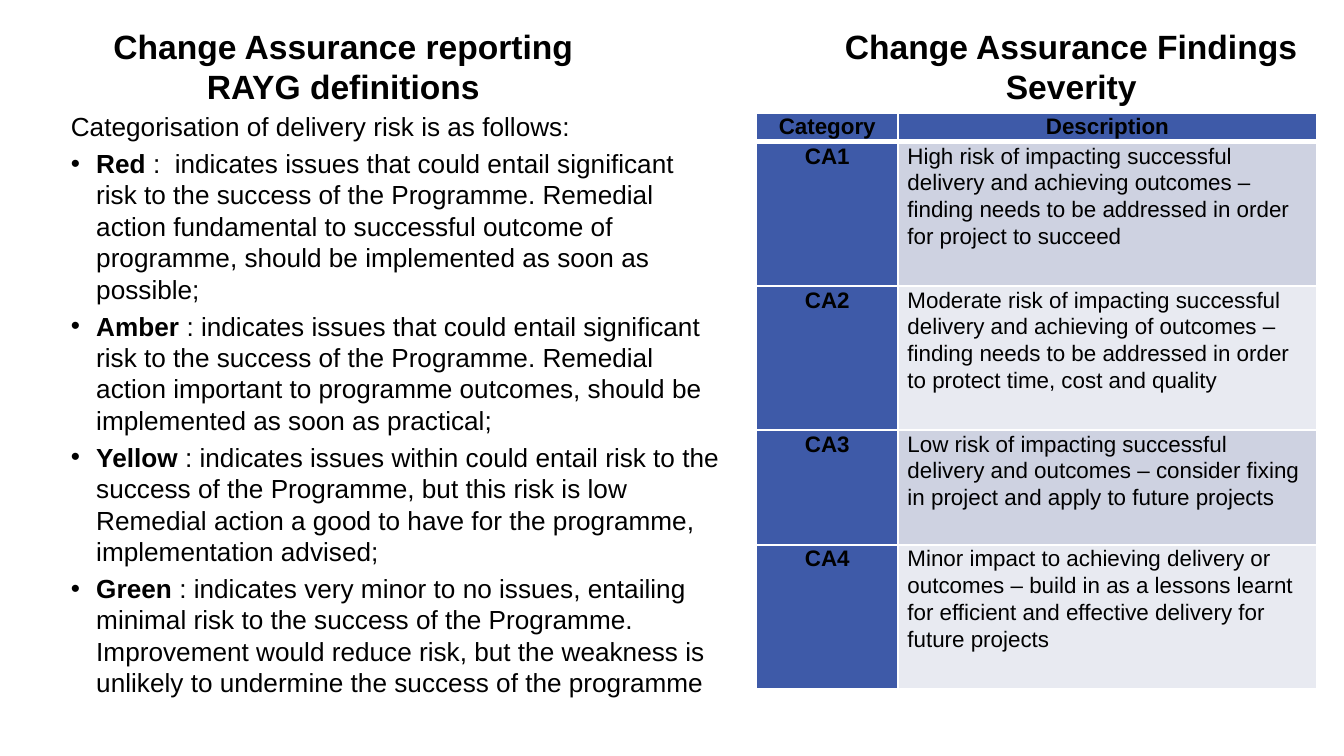
from pptx import Presentation
from pptx.util import Cm, Pt
from pptx.dml.color import RGBColor
from pptx.enum.text import PP_ALIGN, MSO_ANCHOR, MSO_AUTO_SIZE
from lxml.etree import SubElement
from pptx.oxml.ns import qn


def paint(hue):
    return RGBColor.from_string(hue)


def write(para, text, size, bold=False):
    run = para.add_run()
    run.text = text
    run.font.name = "Arial"
    run.font.size = Pt(size)
    run.font.bold = bold
    run.font.color.rgb = paint("000000")


deck = Presentation()
deck.slide_width, deck.slide_height = Cm(25.4), Cm(14.28)
slide = deck.slides.add_slide(deck.slide_layouts[5])

title = slide.shapes.title
side = slide.shapes.add_textbox(Cm(15.09), Cm(0.36), Cm(10.31), Cm(1.8))
title.left, title.top, title.width, title.height = Cm(1.09), Cm(0.36), Cm(10.8), Cm(1.8)
heads = [
    (title, "Change Assurance reporting RAYG definitions"),
    (side, "Change Assurance Findings Severity"),
]
for box, text in heads:
    frame = box.text_frame
    frame.word_wrap = True
    frame.auto_size = MSO_AUTO_SIZE.NONE
    frame.vertical_anchor = MSO_ANCHOR.TOP
    para = frame.paragraphs[0]
    para.alignment = PP_ALIGN.CENTER
    write(para, text, 18, True)

risks = [
    ("Red ", ":  indicates issues that could entail significant risk to the success of the Programme. Remedial action fundamental to successful outcome of programme, should be implemented as soon as possible;"),
    ("Amber ", ": indicates issues that could entail significant risk to the success of the Programme. Remedial action important to programme outcomes, should be implemented as soon as practical;"),
    ("Yellow ", ": indicates issues within could entail risk to the success of the Programme, but this risk is low Remedial action a good to have for the programme, implementation advised;"),
    ("Green ", ": indicates very minor to no issues, entailing minimal risk to the success of the Programme. Improvement would reduce risk, but the weakness is unlikely to undermine the success of the programme"),
]
body = slide.shapes.add_textbox(Cm(1.09), Cm(1.96), Cm(12.8), Cm(10.8)).text_frame
body.word_wrap = True
write(body.paragraphs[0], "Categorisation of delivery risk is as follows:", 14)
for name, text in risks:
    para = body.add_paragraph()
    props = para._p.get_or_add_pPr()
    props.set("marL", str(Cm(0.48)))
    props.set("indent", str(-Cm(0.48)))
    SubElement(props, qn("a:buFont"), typeface="Arial")
    SubElement(props, qn("a:buChar"), char="•")
    para.space_before = Pt(3)
    write(para, name, 14, True)
    write(para, text, 14)

rows = [
    ("Category", "Description", 0.55, "3E5AA8"),
    ("CA1", "High risk of impacting successful delivery and achieving outcomes – finding needs to be addressed in order for project to succeed", 2.72, "CED2E1"),
    ("CA2", "Moderate risk of impacting successful delivery and achieving of outcomes – finding needs to be addressed in order to protect time, cost and quality", 2.72, "E8EAF1"),
    ("CA3", "Low risk of impacting successful delivery and outcomes – consider fixing in project and apply to future projects", 2.17, "CED2E1"),
    ("CA4", "Minor impact to achieving delivery or outcomes – build in as a lessons learnt for efficient and effective delivery for future projects", 2.72, "E8EAF1"),
]
table = slide.shapes.add_table(5, 2, Cm(14.3), Cm(2.13), Cm(10.59), Cm(10.88)).table
table.columns[0].width, table.columns[1].width = Cm(2.67), Cm(7.92)
for i, (code, text, height, tint) in enumerate(rows):
    table.rows[i].height = Cm(height)
    for j, (words, hue) in enumerate([(code, "3E5AA8"), (text, tint)]):
        cell = table.cell(i, j)
        cell.margin_left = cell.margin_right = Cm(0.18)
        cell.margin_top = cell.margin_bottom = 0
        para = cell.text_frame.paragraphs[0]
        label = i == 0 or j == 0
        para.alignment = PP_ALIGN.CENTER if label else PP_ALIGN.LEFT
        para.line_spacing = 1.07
        write(para, words, 12, label)
        props = cell._tc.get_or_add_tcPr()
        for edge in ("lnL", "lnR", "lnT", "lnB"):
            thick = (i, edge) in [(0, "lnB"), (1, "lnT")]
            line = SubElement(props, qn("a:" + edge), w=str(Pt(3 if thick else 1)))
            SubElement(SubElement(line, qn("a:solidFill")), qn("a:srgbClr"), val="FFFFFF")
        cell.fill.solid()
        cell.fill.fore_color.rgb = paint(hue)

deck.save("out.pptx")
